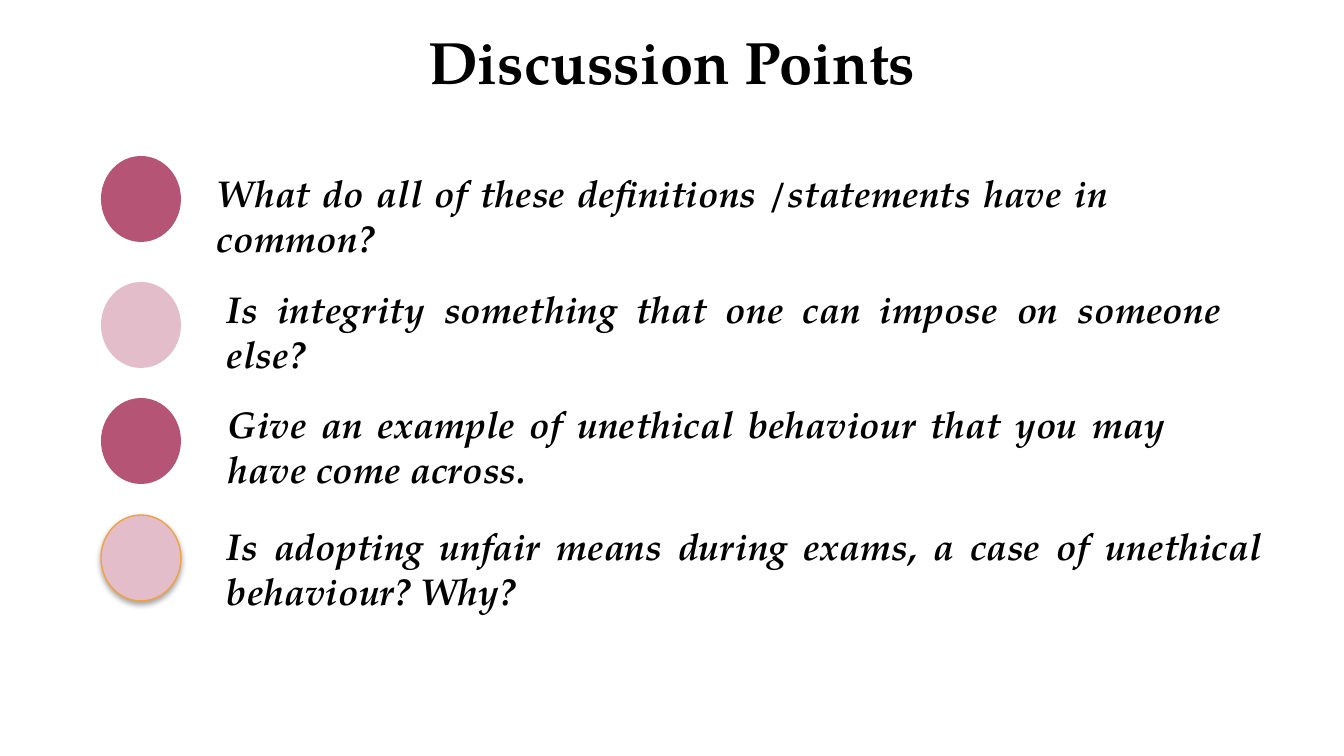
from dataclasses import dataclass

import lxml.etree
import pptx
import pptx.dml.color
import pptx.enum.shapes
import pptx.enum.text
import pptx.oxml.ns
import pptx.util

SLIDE_WIDTH, SLIDE_HEIGHT = 1344, 756
EMU_PER_PX = 9144000 / SLIDE_WIDTH


@dataclass(frozen=True)
class Theme:
    font: str = "TeX Gyre Pagella"
    title_size: int = 32
    point_size: int = 20
    text: str = "000000"
    strong: str = "B55475"
    pale: str = "E3BECA"
    outline: str = "F2A141"
    shadow: str = "000000"


THEME = Theme()

# Text, text left, text top, text width, extra right inset, bullet top
POINTS = [
    ("What do all of these definitions /statements have in common?",
     204, 164, 1021, 103, 156),
    ("Is integrity something that one can impose on someone else?",
     214, 280, 1021, 0, 282),
    ("Give an example of unethical behaviour that you may have come across.",
     215, 395, 995, 31, 398),
    ("Is adopting unfair means during exams, a case of unethical behaviour? Why?",
     214, 517, 1062, 0, 515),
]
BULLET_LEFT, BULLET_WIDTH, BULLET_HEIGHT = 101, 80, 86
TEXT_HEIGHT = 114
SIDE_INSET = 13


def px(length):
    return pptx.util.Emu(round(length * EMU_PER_PX))


def rgb(color):
    return pptx.dml.color.RGBColor.from_string(color)


def add_text(slide, text, box, size, alignment, anchor, italic=False, extra_inset=0):
    shape = slide.shapes.add_textbox(*map(px, box))
    frame = shape.text_frame
    frame.word_wrap = True
    frame.vertical_anchor = anchor
    frame.margin_left = px(SIDE_INSET)
    frame.margin_right = px(SIDE_INSET + extra_inset)
    paragraph = frame.paragraphs[0]
    paragraph.text = text
    paragraph.alignment = alignment
    font = paragraph.font
    font.name = THEME.font
    font.size = pptx.util.Pt(size)
    font.bold = True
    font.italic = italic
    font.color.rgb = rgb(THEME.text)


def add_bullet(slide, top, color):
    shape = slide.shapes.add_shape(
        pptx.enum.shapes.MSO_SHAPE.OVAL,
        px(BULLET_LEFT), px(top), px(BULLET_WIDTH), px(BULLET_HEIGHT))
    shape.fill.solid()
    shape.fill.fore_color.rgb = rgb(color)
    shape.line.fill.background()
    shape.shadow.inherit = False
    return shape


def highlight(shape):
    """Give a bullet its outline and a soft shadow below."""
    shape.line.color.rgb = rgb(THEME.outline)
    shape.line.width = pptx.util.Pt(0.75)
    qn = pptx.oxml.ns.qn
    effects = shape.element.spPr.find(qn("a:effectLst"))
    shadow = lxml.etree.SubElement(
        effects, qn("a:outerShdw"), blurRad=str(pptx.util.Pt(3.1)),
        dist=str(pptx.util.Pt(1.8)), dir="5400000", rotWithShape="0")
    color = lxml.etree.SubElement(shadow, qn("a:srgbClr"), val=THEME.shadow)
    lxml.etree.SubElement(color, qn("a:alpha"), val="35000")


def main():
    presentation = pptx.Presentation()
    presentation.slide_width = px(SLIDE_WIDTH)
    presentation.slide_height = px(SLIDE_HEIGHT)
    slide = presentation.slides.add_slide(presentation.slide_layouts[6])
    align = pptx.enum.text.PP_ALIGN
    anchor = pptx.enum.text.MSO_ANCHOR

    # Title
    add_text(slide, "Discussion Points", (0, 4, SLIDE_WIDTH, TEXT_HEIGHT),
             THEME.title_size, align.CENTER, anchor.MIDDLE)

    # Points, with bullets in alternating colours
    for index, (text, left, top, width, extra_inset, bullet_top) in enumerate(POINTS):
        bullet = add_bullet(slide, bullet_top, (THEME.strong, THEME.pale)[index % 2])
        add_text(slide, text, (left, top, width, TEXT_HEIGHT), THEME.point_size,
                 align.JUSTIFY, anchor.TOP, italic=True, extra_inset=extra_inset)

    # The last bullet stands out
    highlight(bullet)

    presentation.save("out.pptx")


if __name__ == "__main__":
    main()
